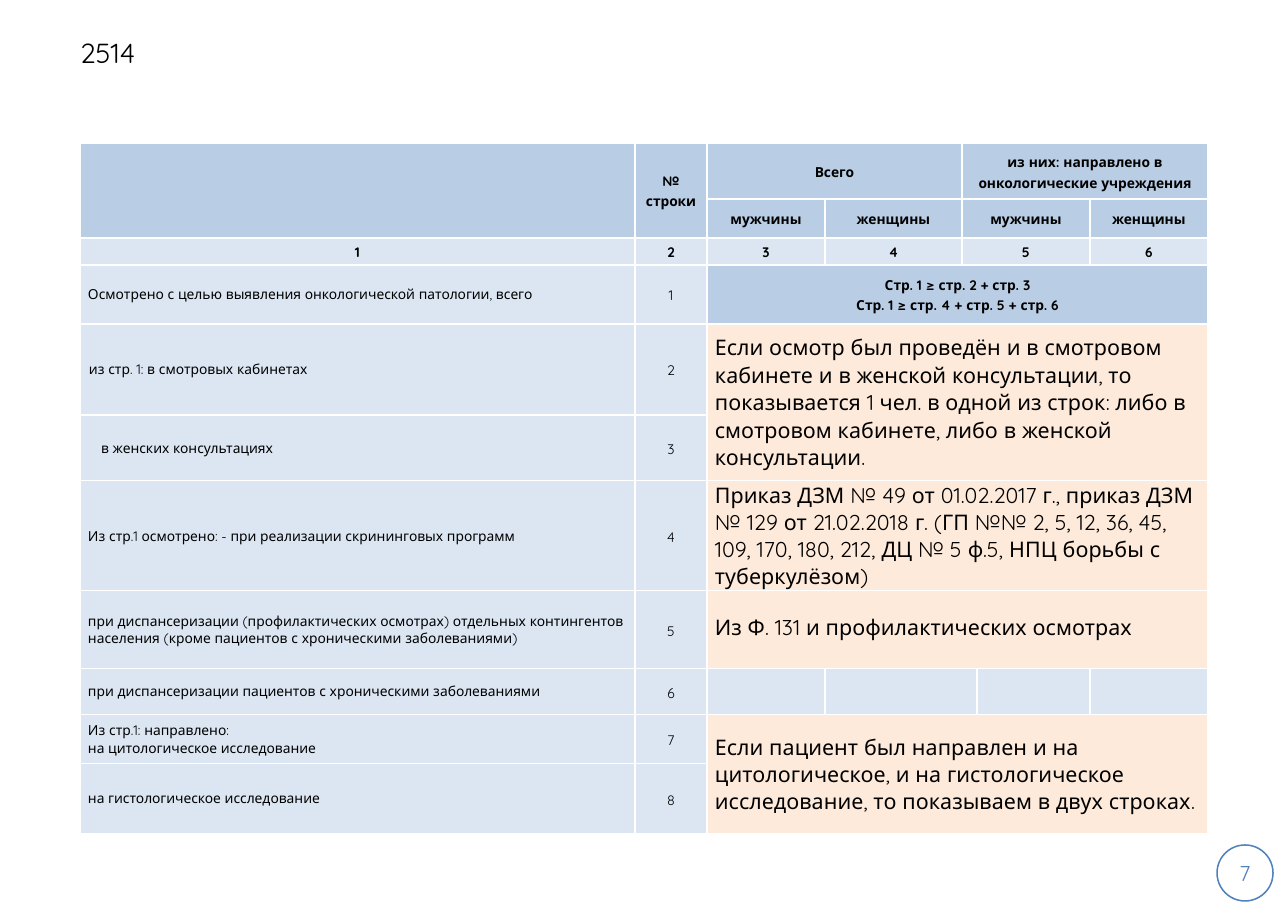
from dataclasses import dataclass
from itertools import product

from lxml import etree
from pptx import Presentation
from pptx.dml.color import RGBColor
from pptx.enum.shapes import MSO_SHAPE
from pptx.enum.text import MSO_ANCHOR, PP_ALIGN
from pptx.oxml.ns import qn
from pptx.util import Pt

EMU_PER_PX = 914400 / 110.2
CENTER, LEFT = PP_ALIGN.CENTER, PP_ALIGN.LEFT
MIDDLE = MSO_ANCHOR.MIDDLE
OVAL = MSO_SHAPE.OVAL


@dataclass(frozen=True)
class Theme:
    font: str = "Quicksand"
    ink: str = "000000"
    accent: str = "4F81BD"
    header: str = "B9CDE5"
    body: str = "DCE6F2"
    note: str = "FDEADA"
    border: str = "FFFFFF"
    title_size: int = 18
    note_size: int = 14
    cell_size: int = 9
    line_width: int = 1
    loose: float = 1.15


THEME = Theme()


def px(length):
    return round(length * EMU_PER_PX)


class SlideBuilder:
    def __init__(self, presentation, theme):
        self.theme = theme
        self.slide = presentation.slides.add_slide(presentation.slide_layouts[6])

    def set_text(self, frame, text, size, color=None, bold=False, align=LEFT,
                 spacing=None, indent=0):
        frame.text = text
        frame.word_wrap = True
        for paragraph in frame.paragraphs:
            paragraph.alignment = align
            if spacing:
                paragraph.line_spacing = spacing
            if indent:
                paragraph._p.get_or_add_pPr().set("marL", str(px(indent)))
            for run in paragraph.runs:
                run.font.name = self.theme.font
                run.font.size = Pt(size)
                run.font.bold = bold
                run.font.color.rgb = RGBColor.from_string(color or self.theme.ink)

    def set_margins(self, frame, left=0, top=0, right=0, bottom=0):
        frame.margin_left, frame.margin_right = px(left), px(right)
        frame.margin_top, frame.margin_bottom = px(top), px(bottom)
        frame.vertical_anchor = MIDDLE

    def title(self, text, *box):
        frame = self.slide.shapes.add_textbox(*map(px, box)).text_frame
        self.set_margins(frame, top=6, right=11, bottom=6)
        self.set_text(frame, text, self.theme.title_size)

    def page_badge(self, text, *box):
        badge = self.slide.shapes.add_shape(OVAL, *map(px, box))
        badge.shadow.inherit = False
        badge.fill.background()
        badge.line.color.rgb = RGBColor.from_string(self.theme.accent)
        badge.line.width = Pt(self.theme.line_width)
        self.set_margins(badge.text_frame)
        self.set_text(badge.text_frame, text, self.theme.note_size,
                      self.theme.accent, align=CENTER)

    def table(self, left, top, widths, heights):
        table = self.slide.shapes.add_table(
            len(heights), len(widths), px(left), px(top),
            px(sum(widths)), px(sum(heights))).table
        table.first_row = table.horz_banding = False
        for column, width in zip(table.columns, widths):
            column.width = px(width)
        for row, height in zip(table.rows, heights):
            row.height = px(height)
        for row, column in product(range(len(heights)), range(len(widths))):
            self.style_cell(table.cell(row, column))
        return table

    def style_cell(self, cell):
        cell.margin_left = cell.margin_right = px(8)
        cell.margin_top = cell.margin_bottom = 0
        cell.vertical_anchor = MIDDLE
        cell.text_frame.paragraphs[0].font.size = Pt(self.theme.cell_size)
        properties = cell._tc.get_or_add_tcPr()
        for side in ("lnL", "lnR", "lnT", "lnB"):
            line = etree.SubElement(properties, qn(f"a:{side}"),
                                    w=str(Pt(self.theme.line_width)))
            fill = etree.SubElement(line, qn("a:solidFill"))
            etree.SubElement(fill, qn("a:srgbClr"), val=self.theme.border)
        self.fill_cell(cell, self.theme.body)

    def fill_cell(self, cell, color):
        cell.fill.solid()
        cell.fill.fore_color.rgb = RGBColor.from_string(color)

    def cell(self, table, row, column, text="", rows=1, columns=1, fill=None,
             size=None, **style):
        cell = table.cell(row, column)
        if rows * columns > 1:
            cell.merge(table.cell(row + rows - 1, column + columns - 1))
        self.fill_cell(cell, fill or self.theme.body)
        if text:
            self.set_text(cell.text_frame, text, size or self.theme.cell_size,
                          **style)


COLUMN_WIDTHS = [555, 72, 118, 137, 15, 113, 118]
ROW_HEIGHTS = [56, 39, 27, 59, 91, 66, 110, 78, 46, 49, 70]

# Row, column, text, rows spanned, columns spanned, line spacing
HEADINGS = [
    (0, 0, "", 2, 1, THEME.loose),
    (0, 1, "№ строки", 2, 1, THEME.loose),
    (0, 2, "Всего", 1, 2, THEME.loose),
    (0, 4, "из них: направлено в онкологические учреждения", 1, 3, Pt(14)),
    (1, 2, "мужчины", 1, 1, THEME.loose),
    (1, 3, "женщины", 1, 1, THEME.loose),
    (1, 4, "мужчины", 1, 2, THEME.loose),
    (1, 6, "женщины", 1, 1, THEME.loose),
    (3, 2, "Стр. 1 ≥ стр. 2 + стр. 3\nСтр. 1 ≥ стр. 4 + стр. 5 + стр. 6",
     1, 5, THEME.loose),
]

# Label and its indent
INDICATORS = [
    ("Осмотрено с целью выявления онкологической патологии, всего", 0),
    ("из стр. 1: в смотровых кабинетах", 1),
    ("в женских консультациях", 13),
    ("Из стр.1 осмотрено: - при реализации скрининговых программ", 0),
    ("при диспансеризации (профилактических осмотрах) отдельных контингентов "
     "населения (кроме пациентов с хроническими заболеваниями)", 0),
    ("при диспансеризации пациентов с хроническими заболеваниями", 0),
    ("Из стр.1: направлено:\nна цитологическое исследование", 0),
    ("на гистологическое исследование", 0),
]

# Row, rows spanned, line spacing, text
NOTES = [
    (4, 2, Pt(18), "Если осмотр был проведён и в смотровом кабинете и в женской "
     "консультации, то показывается 1 чел. в одной из строк: либо в смотровом "
     "кабинете, либо в женской консультации."),
    (6, 1, None, "Приказ ДЗМ № 49 от 01.02.2017 г., приказ ДЗМ № 129 от "
     "21.02.2018 г. (ГП №№ 2, 5, 12, 36, 45, 109, 170, 180, 212, ДЦ № 5 ф.5, "
     "НПЦ борьбы с туберкулёзом)"),
    (7, 1, Pt(14), "Из Ф. 131 и профилактических осмотрах"),
    (9, 2, None, "Если пациент был направлен и на цитологическое, и на "
     "гистологическое исследование, то показываем в двух строках."),
]


def main():
    presentation = Presentation()
    presentation.slide_width, presentation.slide_height = px(1288), px(911)
    page = SlideBuilder(presentation, THEME)

    # Page number and title
    page.page_badge("7", 1217, 845, 56, 56)
    page.title("2514", 80, 0, 1208, 105)

    # Headings and control rules
    form = page.table(80, 143, COLUMN_WIDTHS, ROW_HEIGHTS)
    for row, column, text, rows, columns, spacing in HEADINGS:
        page.cell(form, row, column, text, rows, columns, THEME.header,
                  bold=True, align=CENTER, spacing=spacing)

    # Column numbers; the fifth spans two grid columns
    for number, column in enumerate((0, 1, 2, 3, 4, 6), start=1):
        page.cell(form, 2, column, str(number), columns=2 if column == 4 else 1,
                  bold=True, align=CENTER, spacing=THEME.loose)

    # Indicators with their row numbers
    for number, (label, indent) in enumerate(INDICATORS, start=1):
        page.cell(form, number + 2, 0, label, indent=indent)
        page.cell(form, number + 2, 1, str(number), align=CENTER,
                  spacing=THEME.loose)

    # Explanations and the row left for data
    for row, rows, spacing, text in NOTES:
        page.cell(form, row, 2, text, rows, 5, THEME.note, THEME.note_size,
                  spacing=spacing)
    page.cell(form, 8, 3, columns=2)

    presentation.save("out.pptx")


if __name__ == "__main__":
    main()
